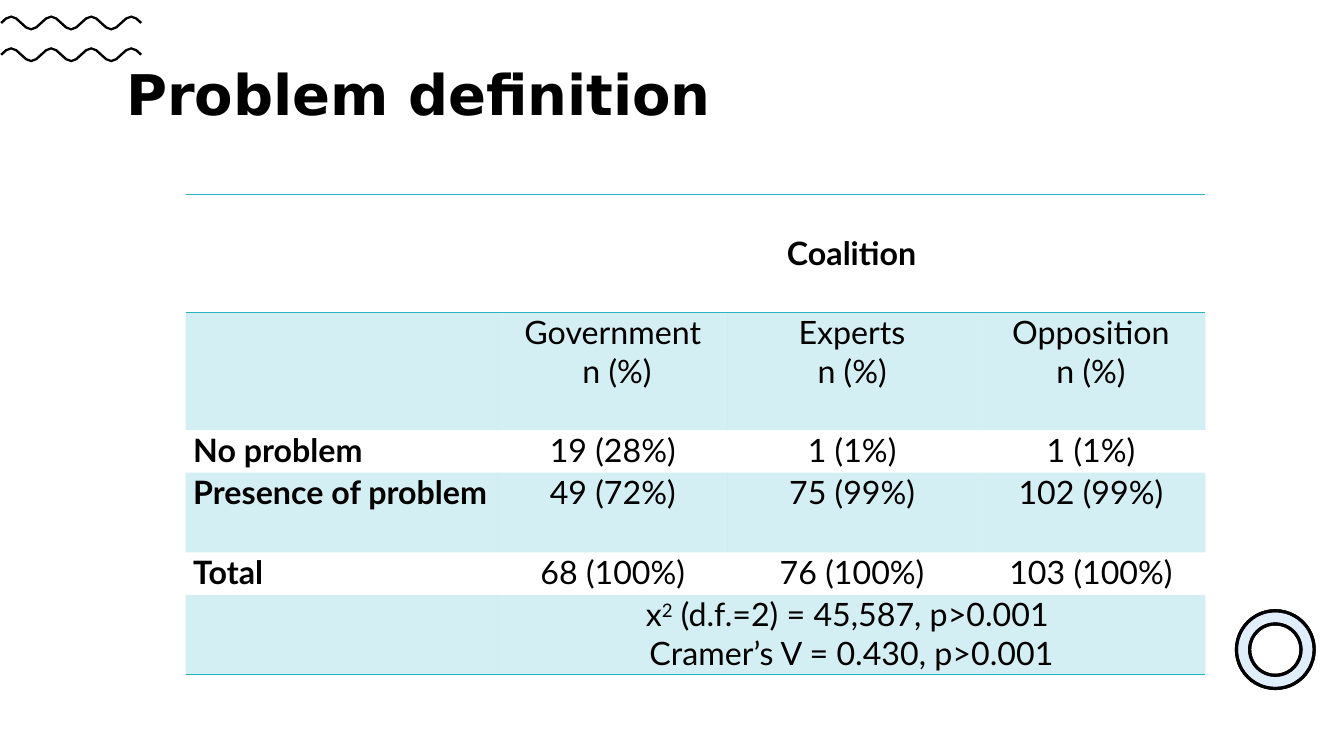
import math
from lxml import etree
from pptx import Presentation
from pptx.dml.color import RGBColor
from pptx.enum import shapes, text
from pptx.oxml import ns
from pptx.util import Cm, Pt

BLACK, WHITE, TEAL, BLUE = "000000", "FFFFFF", "2CB1C3", "67A6EE"
COLUMN_WIDTHS = [7.87, 5.79, 6.27, 5.77]
ROW_HEIGHTS = [2.97, 2.97, 1.07, 2.01, 1.07, 2.01]
COALITIONS = [["Government", " n (%)"], ["Experts", "n (%)"], ["Opposition", "n (%)"]]
COUNTS = {
    2: ["No problem", "19 (28%)", "1 (1%)", "1 (1%)"],
    3: ["Presence of problem", "49 (72%)", "75 (99%)", "102 (99%)"],
    4: ["Total", "68 (100%)", "76 (100%)", "103 (100%)"],
}


def colour(value):
    return RGBColor.from_string(value)


def paint(fill, value):
    fill.solid()
    fill.fore_color.rgb = colour(value)


def fade(properties, percent):
    tone = properties.find(ns.qn("a:solidFill")).find(ns.qn("a:srgbClr"))
    etree.SubElement(tone, ns.qn("a:alpha"), val=str(percent * 1000))


def add_span(para, words, size, font, bold=False):
    span = para.add_run()
    span.text = words
    span.font.size = Pt(size)
    span.font.name = font
    span.font.bold = bold
    span.font.color.rgb = colour(BLACK)
    return span


def add_backdrop(page, width, height):
    backdrop = page.shapes.add_shape(shapes.MSO_SHAPE.RECTANGLE, 0, 0, width, height)
    backdrop.shadow.inherit = False
    paint(backdrop.fill, WHITE)
    backdrop.line.fill.background()
    page.shapes.title._element.addprevious(backdrop._element)


def add_title(page, left, top, width, height):
    title = page.shapes.title
    title.left, title.top, title.width, title.height = map(Cm, (left, top, width, height))
    title.text_frame.vertical_anchor = text.MSO_ANCHOR.MIDDLE
    para = title.text_frame.paragraphs[0]
    para.alignment = text.PP_ALIGN.LEFT
    para.line_spacing = 0.9
    add_span(para, "Problem definition", 40, "DejaVu Sans", True)


def add_wave(group, left, middle, width):
    amplitude, half_stroke, periods, steps = 0.16, 0.03, 3.5, 28
    upper, lower = [], []
    for step in range(steps + 1):
        angle = 2 * math.pi * periods * step / steps
        x = left + width * step / steps
        y = middle - amplitude * math.sin(angle)
        slope = -amplitude * math.cos(angle) * 2 * math.pi * periods / width
        shift = half_stroke / math.hypot(1, slope)
        upper.append((Cm(x + slope * shift), Cm(y - shift)))
        lower.append((Cm(x - slope * shift), Cm(y + shift)))
    outline = upper + lower[::-1]
    builder = group.shapes.build_freeform(*outline[0])
    builder.add_line_segments(outline[1:], close=True)
    wave = builder.convert_to_shape()
    wave.shadow.inherit = False
    paint(wave.fill, BLACK)
    wave.line.fill.background()


def add_waves(page, left, top, width, gap):
    group = page.shapes.add_group_shape()
    for row in range(2):
        add_wave(group, left, top + row * gap, width)


def add_ring(page, left, top, size):
    for tone, opacity in ((WHITE, 100), (BLUE, 20)):
        ring = page.shapes.add_shape(
            shapes.MSO_SHAPE.DONUT, Cm(left), Cm(top), Cm(size), Cm(size))
        ring.adjustments[0] = 0.17
        ring.shadow.inherit = False
        paint(ring.fill, tone)
        fade(ring._element.spPr, opacity)
        ring.line.color.rgb = colour(BLACK)
        ring.line.width = Pt(2.25)


def add_border(cell, side):
    border = etree.Element(ns.qn("a:" + side), w=str(Pt(1)))
    fill = etree.SubElement(border, ns.qn("a:solidFill"))
    etree.SubElement(fill, ns.qn("a:srgbClr"), val=TEAL)
    cell._tc.get_or_add_tcPr().insert(0, border)


def write_cell(cell, lines, bold=False, align=text.PP_ALIGN.CENTER):
    for index, line in enumerate(lines):
        frame = cell.text_frame
        para = frame.add_paragraph() if index else frame.paragraphs[0]
        para.alignment = align
        for position, words in enumerate(line.split("^")):
            span = add_span(para, words, 23, "Lato", bold)
            if position == 1:
                span.font._element.set("baseline", "30000")


def style_cell(cell, row):
    cell.margin_left = cell.margin_right = Cm(0.19)
    cell.margin_top = cell.margin_bottom = 0
    if row % 2:
        paint(cell.fill, TEAL)
        fade(cell._tc.tcPr, 20)
    else:
        cell.fill.background()
    if row in (0, len(ROW_HEIGHTS) - 1):
        add_border(cell, "lnB")
    if row == 0:
        add_border(cell, "lnT")


def add_results(page, left, top):
    frame = page.shapes.add_table(
        len(ROW_HEIGHTS), len(COLUMN_WIDTHS), Cm(left), Cm(top),
        Cm(sum(COLUMN_WIDTHS)), Cm(sum(ROW_HEIGHTS)))
    table = frame.table
    table.first_row = table.horz_banding = False
    style = table._tbl.tblPr.find(ns.qn("a:tableStyleId"))
    style.text = "{2D5ABB26-0587-4C30-8999-92F81FD0307C}"
    for column, width in zip(table.columns, COLUMN_WIDTHS):
        column.width = Cm(width)
    for index, height in enumerate(ROW_HEIGHTS):
        table.rows[index].height = Cm(height)
        for cell in table.rows[index].cells:
            style_cell(cell, index)
    for row in (0, len(ROW_HEIGHTS) - 1):
        table.cell(row, 1).merge(table.cell(row, 3))

    write_cell(table.cell(0, 1), ["Coalition"], True)
    table.cell(0, 1).vertical_anchor = text.MSO_ANCHOR.MIDDLE
    for column, heading in enumerate(COALITIONS, 1):
        write_cell(table.cell(1, column), heading)
    for row, (label, *counts) in COUNTS.items():
        write_cell(table.cell(row, 0), [label], True, text.PP_ALIGN.LEFT)
        for column, count in enumerate(counts, 1):
            write_cell(table.cell(row, column), [count])
    write_cell(table.cell(5, 1), [
        "x^2^ (d.f.=2) = 45,587, p>0.001 ", "Cramer’s V = 0.430, p>0.001"])


def main():
    deck = Presentation()
    deck.slide_width, deck.slide_height = Cm(33.87), Cm(19.05)
    page = deck.slides.add_slide(deck.slide_layouts[5])
    add_backdrop(page, deck.slide_width, deck.slide_height)
    add_title(page, 2.93, 0.89, 29.21, 3.12)
    add_waves(page, 0.03, 0.58, 3.53, 0.8)
    add_ring(page, 31.16, 15.39, 1.96)
    add_results(page, 4.68, 4.9)
    deck.save("out.pptx")


if __name__ == "__main__":
    main()
